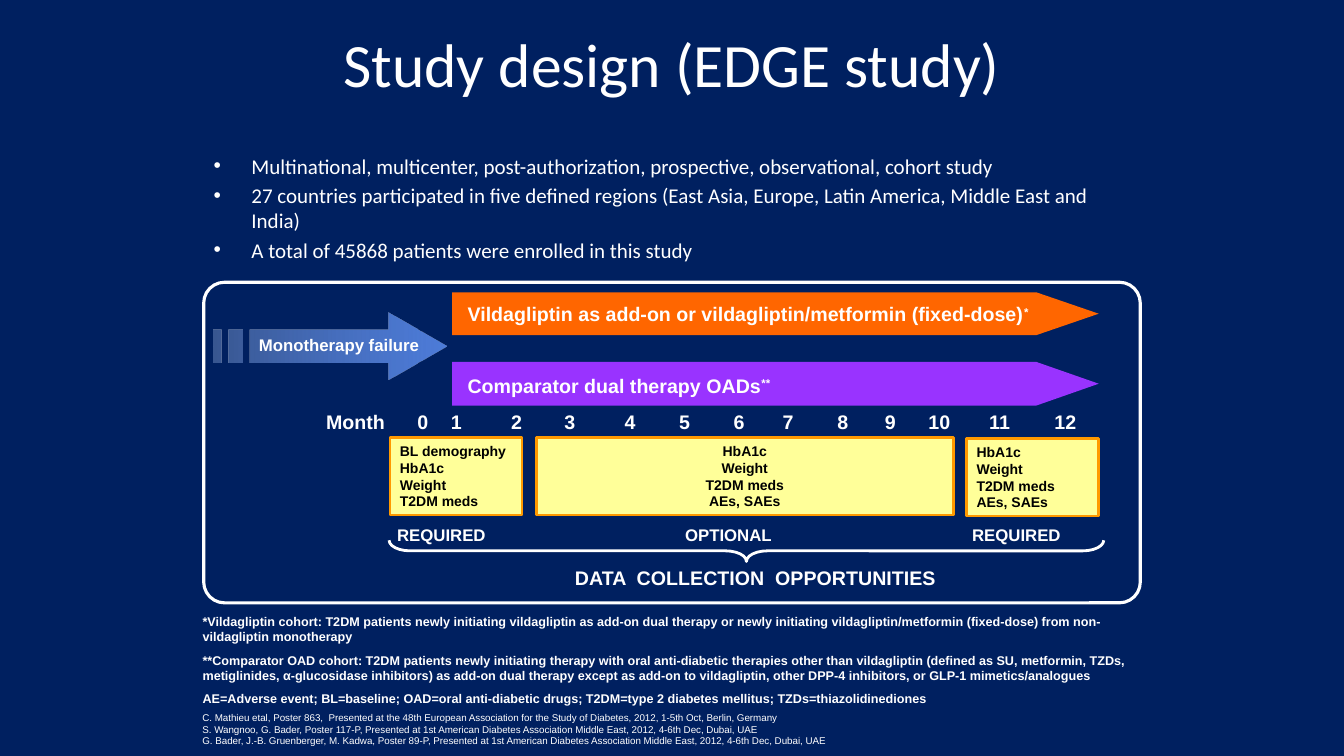
"""Builds the EDGE study design slide."""
from lxml.etree import SubElement
from pptx import Presentation
from pptx.dml.color import RGBColor
from pptx.enum.shapes import MSO_SHAPE
from pptx.enum.text import MSO_ANCHOR, PP_ALIGN
from pptx.oxml.ns import qn
from pptx.util import Pt

NAVY = RGBColor(0x00, 0x20, 0x60)
WHITE = RGBColor(0xFF, 0xFF, 0xFF)
BLACK = RGBColor(0x00, 0x00, 0x00)
ORANGE = RGBColor(0xFF, 0x66, 0x00)
PURPLE = RGBColor(0x99, 0x33, 0xFF)
AMBER = RGBColor(0xFF, 0x99, 0x00)
YELLOW = RGBColor(0xFF, 0xFF, 0x99)
STEEL = RGBColor(0x3A, 0x58, 0x92)
SKY = RGBColor(0x66, 0x99, 0xFF)

deck = Presentation()
deck.slide_width, deck.slide_height = Pt(960), Pt(540)
page = deck.slides.add_slide(deck.slide_layouts[6])
page.background.fill.solid()
page.background.fill.fore_color.rgb = NAVY


def write(box, lines, size, name="Arial", bold=True, color=WHITE,
          align=PP_ALIGN.LEFT, anchor=MSO_ANCHOR.TOP, left_inset=7.2):
    frame = box.text_frame
    frame.word_wrap = True
    frame.vertical_anchor = anchor
    frame.margin_left = Pt(left_inset)
    frame.text = "\n".join(lines)
    for para in frame.paragraphs:
        para.alignment = align
        for span in para.runs:
            span.font.size = Pt(size)
            span.font.name = name
            span.font.bold = bold
            span.font.color.rgb = color
    return frame


def draw_outline(*contours):
    first, *others = [[(Pt(x), Pt(y)) for x, y in contour] for contour in contours]
    builder = page.shapes.build_freeform(*first[0], scale=1.0)
    builder.add_line_segments(first[1:], close=True)
    for contour in others:
        builder.move_to(*contour[0])
        builder.add_line_segments(contour[1:], close=True)
    outline = builder.convert_to_shape()
    outline.shadow.inherit = False
    outline.line.fill.background()
    return outline


title = page.shapes.add_textbox(Pt(145.5), Pt(2.2), Pt(669), Pt(85))
write(title, ["Study design (EDGE study)"], 44, "Calibri", False,
      align=PP_ALIGN.CENTER, anchor=MSO_ANCHOR.MIDDLE)

summary = page.shapes.add_textbox(Pt(145.5), Pt(105.8), Pt(669), Pt(123))
points = write(summary, [
    "Multinational, multicenter, post-authorization, prospective, observational, cohort study",
    "27 countries participated in five defined regions (East Asia, Europe, Latin America, "
    "Middle East and India)",
    "A total of 45868 patients were enrolled in this study",
], 15, "Calibri", False)
for index, para in enumerate(points.paragraphs):
    properties = para._p.get_or_add_pPr()
    properties.set("marL", str(Pt(27)))
    properties.set("indent", str(-Pt(27)))
    SubElement(properties, qn("a:buFont"), typeface="Arial")
    SubElement(properties, qn("a:buChar"), char="•")
    if index:
        para.space_before = Pt(3)

failure_arrow = draw_outline(
    [(277.2, 223.2), (277.2, 235.4), (178.6, 235.4), (178.6, 259.2),
     (277.2, 259.2), (277.2, 271.4), (319, 247.3)],
    *[[(left, 235.4), (left, 259.2), (right, 259.2), (right, 235.4)]
      for left, right in [(163.4, 173.5), (152.6, 158.4)]])
failure_arrow.fill.gradient()
failure_arrow.fill.gradient_angle = 0
for stop, color, position in zip(failure_arrow.fill.gradient_stops, (STEEL, SKY), (0, 1)):
    stop.color.rgb = color
    stop.position = position
end_color = failure_arrow._element.spPr.findall(".//" + qn("a:srgbClr"))[-1]
SubElement(end_color, qn("a:alpha"), val="76000")

failure_label = page.shapes.add_textbox(Pt(177.8), Pt(235.4), Pt(130.3), Pt(22.3))
write(failure_label, ["Monotherapy failure"], 12, anchor=MSO_ANCHOR.MIDDLE).word_wrap = False

outcomes = ["HbA1c", "Weight", "T2DM meds"]
visits = [
    (278.6, 312.5, 94.3, ["BL demography"] + outcomes, PP_ALIGN.LEFT),
    (383, 312.5, 298, outcomes + ["AEs, SAEs"], PP_ALIGN.CENTER),
    (690.5, 313.2, 94.3, outcomes + ["AEs, SAEs"], PP_ALIGN.LEFT),
]
for left, top, width, lines, align in visits:
    visit = page.shapes.add_shape(MSO_SHAPE.RECTANGLE, Pt(left), Pt(top), Pt(width), Pt(55.4))
    visit.shadow.inherit = False
    visit.fill.solid()
    visit.fill.fore_color.rgb = YELLOW
    visit.line.color.rgb = AMBER
    visit.line.width = Pt(2)
    write(visit, lines, 10, color=BLACK, align=align)

month_stops = [69, 93, 136, 174, 217, 256, 295, 330, 369, 403, 438, 481, 528]
rows = [
    (218, 289.4, 593.3, 15, 14, ["Month"] + [str(month) for month in range(13)],
     month_stops, "ctr"),
    (266.4, 371.5, 527, 17.2, 12, ["REQUIRED", "OPTIONAL", "REQUIRED"], [205.7, 410.7], "l"),
]
for left, top, width, inset, size, labels, stops, kind in rows:
    row = page.shapes.add_textbox(Pt(left), Pt(top), Pt(width), Pt(24))
    para = write(row, ["\t".join(labels)], size, left_inset=inset).paragraphs[0]
    tabs = SubElement(para._p.get_or_add_pPr(), qn("a:tabLst"))
    for stop in stops:
        SubElement(tabs, qn("a:tab"), pos=str(Pt(stop)), algn=kind)

brace = page.shapes.add_shape(MSO_SHAPE.RIGHT_BRACE, Pt(525.6), Pt(138.2), Pt(15.1), Pt(510.5))
brace.rotation = 90
brace.adjustments[0], brace.adjustments[1] = 0.99, 0.5
panel = page.shapes.add_shape(MSO_SHAPE.ROUNDED_RECTANGLE, Pt(145.5), Pt(201.6), Pt(669), Pt(229))
panel.adjustments[0] = 0.065
for shape, weight in [(brace, 2), (panel, 2.25)]:
    shape.shadow.inherit = False
    shape.fill.background()
    shape.line.color.rgb = WHITE
    shape.line.width = Pt(weight)

therapies = [
    (208.8, 30.6, 212.4, ORANGE,
     "Vildagliptin as add-on or vildagliptin/metformin (fixed-dose)", "*"),
    (258.5, 31.2, 263.5, PURPLE, "Comparator dual therapy OADs", "**"),
]
for top, height, label_top, color, name, mark in therapies:
    banner = draw_outline([(323, top + height), (740.2, top + height),
                           (784.8, top + height / 2), (740.2, top), (323, top)])
    banner.fill.solid()
    banner.fill.fore_color.rgb = color
    label = page.shapes.add_textbox(Pt(326.9), Pt(label_top), Pt(419), Pt(24.5))
    para = write(label, [name], 14).paragraphs[0]
    span = para.add_run()
    span.text = mark
    span.font.size = Pt(14)
    span.font.name = "Arial"
    span.font.bold = True
    span.font.color.rgb = WHITE
    span._r.get_or_add_rPr().set("baseline", "30000")

collection = page.shapes.add_textbox(Pt(366.5), Pt(401), Pt(346.3), Pt(24.5))
write(collection, ["DATA  COLLECTION  OPPORTUNITIES"], 14, align=PP_ALIGN.CENTER)

footnotes = page.shapes.add_textbox(Pt(144.7), Pt(434.9), Pt(687.6), Pt(75.6))
notes = write(footnotes, [
    "*Vildagliptin cohort: T2DM patients newly initiating vildagliptin as add-on dual therapy "
    "or newly initiating vildagliptin/metformin (fixed-dose) from non-vildagliptin monotherapy",
    "**Comparator OAD cohort: T2DM patients newly initiating therapy with oral anti-diabetic "
    "therapies other than vildagliptin (defined as SU, metformin, TZDs, metiglinides, "
    "α-glucosidase inhibitors) as add-on dual therapy except as add-on to vildagliptin, "
    "other DPP-4 inhibitors, or GLP-1 mimetics/analogues",
    "AE=Adverse event; BL=baseline; OAD=oral anti-diabetic drugs; "
    "T2DM=type 2 diabetes mellitus; TZDs=thiazolidinediones",
], 9, left_inset=0)
for para in notes.paragraphs:
    para.space_after = Pt(6)

references = page.shapes.add_textbox(Pt(137.5), Pt(504.7), Pt(566.6), Pt(33.8))
write(references, [
    "C. Mathieu etal, Poster 863,  Presented at the 48th European Association for the Study "
    "of Diabetes, 2012, 1-5th Oct, Berlin, Germany",
    "S. Wangnoo, G. Bader, Poster 117-P, Presented at 1st American Diabetes Association "
    "Middle East, 2012, 4-6th Dec, Dubai, UAE",
    "G. Bader, J.-B. Gruenberger, M. Kadwa, Poster 89-P, Presented at 1st American Diabetes "
    "Association Middle East, 2012, 4-6th Dec, Dubai, UAE",
], 7, bold=False)

deck.save("out.pptx")
